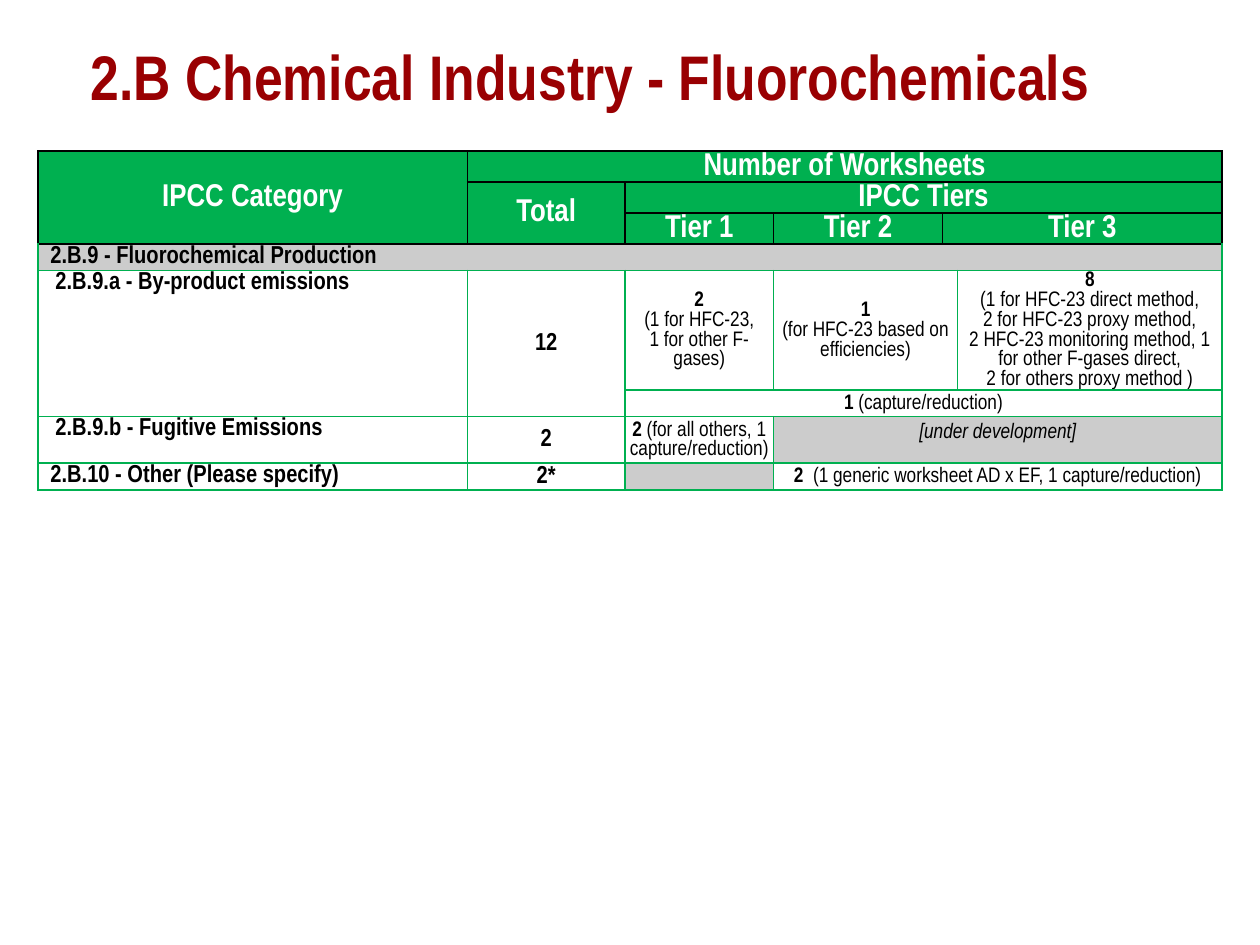
import pptx
import pptx.util
import pptx.dml.color
import pptx.enum.text
from lxml import etree
from pptx.oxml.ns import qn

Inches = pptx.util.Inches
Pt = pptx.util.Pt
ANCHOR = pptx.enum.text.MSO_ANCHOR
ALIGN = pptx.enum.text.PP_ALIGN
COLORS = {"title": "990002", "green": "00B050", "gray": "CCCCCC",
          "white": "FFFFFF", "black": "000000"}


def write(paragraph, text, size=14, color="black", bold=True, italic=False, align=ALIGN.CENTER):
    paragraph.alignment = align
    run = paragraph.add_run()
    run.text = text
    run.font.name = "Arial Narrow"
    run.font.size = Pt(size)
    run.font.bold = bold
    run.font.italic = italic
    run.font.color.rgb = pptx.dml.color.RGBColor.from_string(COLORS[color])


def set_borders(cell, color, top):
    properties = cell._tc.get_or_add_tcPr()
    sides = {"a:lnL": color, "a:lnR": color, "a:lnT": top, "a:lnB": color}
    for index, (side, line_color) in enumerate(sides.items()):
        line = etree.Element(qn(side), w=str(Pt(1)))
        fill = etree.SubElement(line, qn("a:solidFill"))
        etree.SubElement(fill, qn("a:srgbClr"), val=COLORS[line_color])
        properties.insert(index, line)


presentation = pptx.Presentation()
presentation.slide_width = Inches(10)
presentation.slide_height = Inches(7.5)
slide = presentation.slides.add_slide(presentation.slide_layouts[5])

# Title
title = slide.shapes.title
title.left, title.top = Inches(0.62), Inches(0.13)
title.width, title.height = Inches(9.16), Inches(0.94)
title.text_frame.auto_size = pptx.enum.text.MSO_AUTO_SIZE.NONE
title.text_frame.vertical_anchor = ANCHOR.MIDDLE
write(title.text_frame.paragraphs[0], "2.B Chemical Industry - Fluorochemicals",
      size=36, color="title", align=ALIGN.LEFT)

# Table grid
column_widths = [3.41, 1.25, 1.18, 1.34, 0.12, 2.1]
row_heights = [0.24, 0.24, 0.24, 0.21, 0.95, 0.21, 0.37, 0.21]
table = slide.shapes.add_table(
    len(row_heights), len(column_widths), Inches(0.3), Inches(1.2),
    Inches(sum(column_widths)), Inches(sum(row_heights))).table
table.first_row = table.horz_banding = False
for column, width in zip(table.columns, column_widths):
    column.width = Inches(width)
for row, height in zip(table.rows, row_heights):
    row.height = Inches(height)
for cell in table.iter_cells():
    # Small type in empty cells keeps the rows low
    ending = etree.SubElement(cell.text_frame.paragraphs[0]._p, qn("a:endParaRPr"))
    ending.set("sz", "1200")

# Kinds of cell
header = {"size": 18, "fill": "green", "color": "white", "border": "black"}
section = {"fill": "gray", "left": 0.1, "anchor": ANCHOR.TOP, "align": ALIGN.LEFT}
category = {**section, "fill": "white"}
subcategory = {**category, "left": 0.14}
detail = {"size": 12}
pending = {"size": 12, "fill": "gray", "italic": True, "anchor": ANCHOR.BOTTOM, "bottom": 0.16}

# Row, column, row span, column span, lines (bold part | regular part), kind
cells = [
    (0, 0, 3, 1, ["IPCC Category"], header),
    (0, 1, 1, 5, ["Number of Worksheets"], header),
    (1, 1, 2, 1, ["Total"], header),
    (1, 2, 1, 4, ["IPCC Tiers"], header),
    (2, 2, 1, 1, ["Tier 1"], header),
    (2, 3, 1, 1, ["Tier 2"], header),
    (2, 4, 1, 2, ["Tier 3"], header),
    (3, 0, 1, 6, ["2.B.9 - Fluorochemical Production"], {**section, "top_border": "black"}),
    (4, 0, 2, 1, ["2.B.9.a - By-product emissions"], subcategory),
    (4, 1, 2, 1, ["12"], {}),
    (4, 2, 1, 1, ["2", "|(1 for HFC-23,", "|1 for other F-gases)"], detail),
    (4, 3, 1, 2, ["1", "|(for HFC-23 based on efficiencies)"], detail),
    (4, 5, 1, 1, ["8", "|(1 for HFC-23 direct method,", "|2 for HFC-23 proxy method,",
                  "|2 HFC-23 monitoring method, 1 for other F-gases direct,",
                  "|2 for others proxy method )"], detail),
    (5, 2, 1, 4, ["1 |(capture/reduction)"], detail),
    (6, 0, 1, 1, ["2.B.9.b - Fugitive Emissions"], subcategory),
    (6, 1, 1, 1, ["2"], {}),
    (6, 2, 1, 1, ["2 |(for all others, 1 capture/reduction)"], detail),
    (6, 3, 1, 3, ["|[under development]"], pending),
    (7, 0, 1, 1, ["2.B.10 - Other (Please specify)"], category),
    (7, 1, 1, 1, ["2*"], {}),
    (7, 2, 1, 1, [], {"fill": "gray"}),
    (7, 3, 1, 3, ["2\u00a0 |(1 generic worksheet AD x EF, 1 capture/reduction)".replace("\u00a0", " ")],
     detail),
]

for row, column, row_span, column_span, lines, kind in cells:
    cell = table.cell(row, column)
    if row_span * column_span > 1:
        cell.merge(table.cell(row + row_span - 1, column + column_span - 1))
    cell.margin_left = Inches(kind.get("left", 0.01))
    cell.margin_right = cell.margin_top = Inches(0.01)
    cell.margin_bottom = Inches(kind.get("bottom", 0))
    cell.vertical_anchor = kind.get("anchor", ANCHOR.MIDDLE)

    # Fill and borders cover the whole span
    border = kind.get("border", "green")
    for covered_row in range(row, row + row_span):
        for covered_column in range(column, column + column_span):
            covered = table.cell(covered_row, covered_column)
            covered.fill.solid()
            covered.fill.fore_color.rgb = pptx.dml.color.RGBColor.from_string(
                COLORS[kind.get("fill", "white")])
            set_borders(covered, border, kind.get("top_border", border))

    # Text
    text_format = {key: kind[key] for key in ("size", "color", "italic", "align") if key in kind}
    for index, line in enumerate(lines):
        frame = cell.text_frame
        paragraph = frame.add_paragraph() if index else frame.paragraphs[0]
        strong, _, regular = line.partition("|")
        for text, bold in ((strong, True), (regular, False)):
            if text:
                write(paragraph, text, bold=bold, **text_format)

presentation.save("out.pptx")
